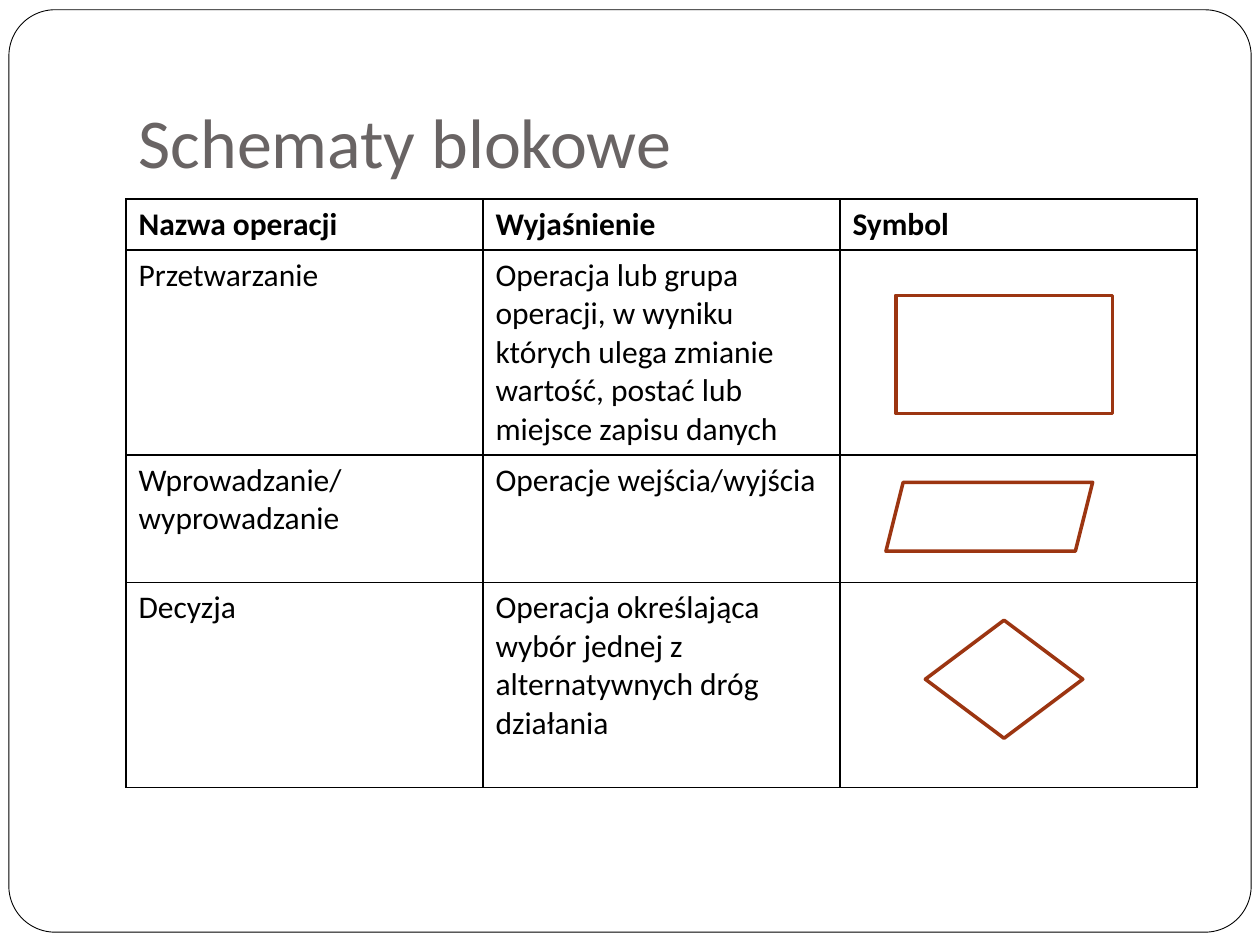
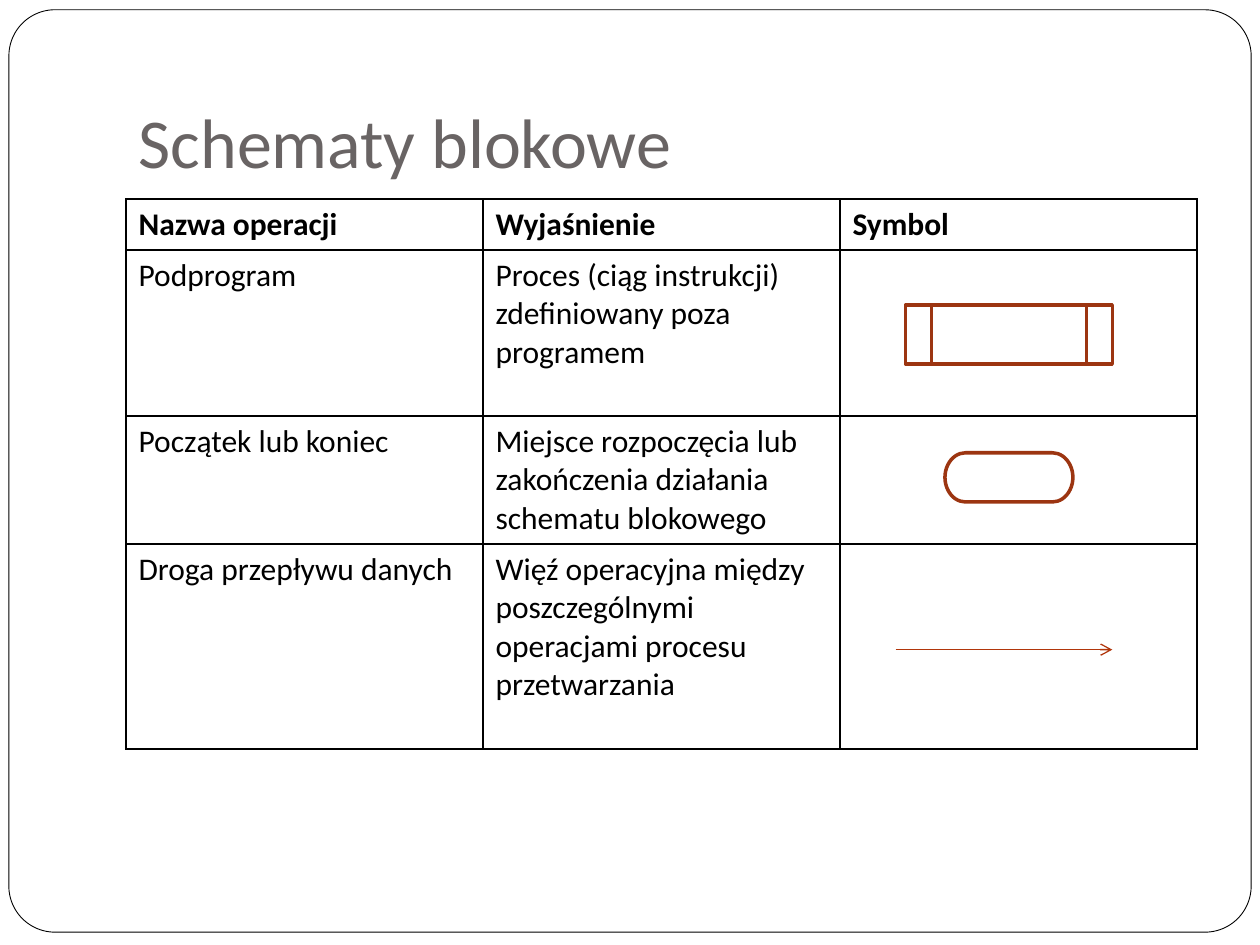
"""Two slides that explain the symbols used in flowcharts."""
from typing import NamedTuple

from lxml import etree
from pptx import Presentation
from pptx import util as u
from pptx.dml.color import RGBColor
from pptx.enum import shapes, text
from pptx.oxml import ns
from pptx.slide import Slide

WIDE, HIGH = u.Inches(10), u.Inches(7.5)
COLS, ROWS = 128, 96
BLACK = RGBColor(0x00, 0x00, 0x00)
GREY = RGBColor(0x69, 0x64, 0x64)
RUST = RGBColor(0x9C, 0x35, 0x11)
FLAME = RGBColor(0xB1, 0x36, 0x0B)
FONT = "Calibri"
TITLE = "Schematy blokowe"
HEADS = ("Nazwa operacji", "Wyjaśnienie", "Symbol")
LINE, PAD = 0.305, 0.1
KIND = shapes.MSO_SHAPE


class Box(NamedTuple):
    left: float
    top: float
    width: float
    height: float

    def place(self) -> tuple[int, int, int, int]:
        return (int(WIDE * self.left / COLS), int(HIGH * self.top / ROWS),
                int(WIDE * self.width / COLS), int(HIGH * self.height / ROWS))


class Step(NamedTuple):
    name: str
    sense: str
    lines: int
    kind: KIND | None
    box: Box


FRAME = Box(0.9, 1, 126.2, 93.7)
HEAD = Box(12.8, 3.84, 108.8, 16)
GRID = Box(12.8, 20.2, 108.8, 59)

PAGES = (
    (
        Step("Przetwarzanie",
             "Operacja lub grupa operacji, w wyniku których ulega zmianie "
             "wartość, postać lub miejsce zapisu danych",
             5, KIND.RECTANGLE, Box(91, 30, 22, 12)),
        Step("Wprowadzanie/ wyprowadzanie", "Operacje wejścia/wyjścia",
             3, KIND.PARALLELOGRAM, Box(90, 49, 21, 7)),
        Step("Decyzja",
             "Operacja określająca wybór jednej z alternatywnych dróg działania",
             5, KIND.DIAMOND, Box(94, 63, 16, 12)),
    ),
    (
        Step("Podprogram",
             "Proces (ciąg instrukcji) zdefiniowany poza programem",
             4, KIND.FLOWCHART_PREDEFINED_PROCESS, Box(92, 31, 21, 6)),
        Step("Początek lub koniec",
             "Miejsce rozpoczęcia lub zakończenia działania schematu blokowego",
             3, KIND.FLOWCHART_TERMINATOR, Box(96, 46, 13, 5)),
        Step("Droga przepływu danych",
             "Więź operacyjna między poszczególnymi operacjami procesu "
             "przetwarzania",
             5, None, Box(91, 66, 22, 0)),
    ),
)


def style(frame, size: int, color: RGBColor, bold: bool = False) -> None:
    for para in frame.paragraphs:
        for run in para.runs:
            font = run.font
            font.name, font.size, font.bold = FONT, u.Pt(size), bold
            font.color.rgb = color


def draw_shape(slide: Slide, kind: KIND, box: Box, color: RGBColor,
               weight: float):
    shape = slide.shapes.add_shape(kind, *box.place())
    shape.shadow.inherit = False
    shape.fill.background()
    shape.line.color.rgb = color
    shape.line.width = u.Pt(weight)
    return shape


def draw_arrow(slide: Slide, box: Box) -> None:
    left, top, width, height = box.place()
    arrow = slide.shapes.add_connector(
        shapes.MSO_CONNECTOR.STRAIGHT, left, top, left + width, top + height)
    arrow.line.color.rgb = FLAME
    arrow.line.width = u.Pt(0.75)
    etree.SubElement(arrow.line._get_or_add_ln(), ns.qn("a:tailEnd"),
                     type="arrow")
    etree.SubElement(arrow._element.spPr, ns.qn("a:effectLst"))


def draw_title(slide: Slide) -> None:
    title = slide.shapes.title
    title.left, title.top, title.width, title.height = HEAD.place()
    frame = title.text_frame
    frame.text = TITLE
    frame.vertical_anchor = text.MSO_ANCHOR.BOTTOM
    frame.auto_size = text.MSO_AUTO_SIZE.NONE
    frame.margin_left = frame.margin_right = frame.margin_bottom = u.Inches(0.1)
    frame.margin_top = u.Inches(0.05)
    frame.paragraphs[0].alignment = text.PP_ALIGN.LEFT
    style(frame, 40, GREY)


def rule_cell(cell) -> None:
    props = cell._tc.get_or_add_tcPr()
    for side in ("lnL", "lnR", "lnT", "lnB"):
        edge = etree.SubElement(props, ns.qn(f"a:{side}"), w=str(u.Pt(1)))
        fill = etree.SubElement(edge, ns.qn("a:solidFill"))
        etree.SubElement(fill, ns.qn("a:srgbClr"), val=str(BLACK))
    cell.fill.background()


def draw_table(slide: Slide, steps: tuple[Step, ...]) -> None:
    rows = [HEADS] + [(step.name, step.sense, "") for step in steps]
    lines = [1] + [step.lines for step in steps]
    table = slide.shapes.add_table(len(rows), len(HEADS), *GRID.place()).table
    table.first_row = table.horz_banding = False
    for r, words in enumerate(rows):
        table.rows[r].height = u.Inches(PAD + LINE * lines[r])
        for c, word in enumerate(words):
            cell = table.cell(r, c)
            cell.text_frame.text = word
            style(cell.text_frame, 18, BLACK, bold=r == 0)
            rule_cell(cell)


def draw_page(slide: Slide, steps: tuple[Step, ...]) -> None:
    frame = draw_shape(slide, KIND.ROUNDED_RECTANGLE, FRAME, BLACK, 0.5)
    frame.adjustments[0] = 0.05
    draw_title(slide)
    draw_table(slide, steps)
    for step in steps:
        if step.kind is None:
            draw_arrow(slide, step.box)
        else:
            draw_shape(slide, step.kind, step.box, RUST, 2)


def main() -> None:
    deck = Presentation()
    deck.slide_width, deck.slide_height = WIDE, HIGH
    for steps in PAGES:
        draw_page(deck.slides.add_slide(deck.slide_layouts[5]), steps)
    deck.save("out.pptx")


if __name__ == "__main__":
    main()
